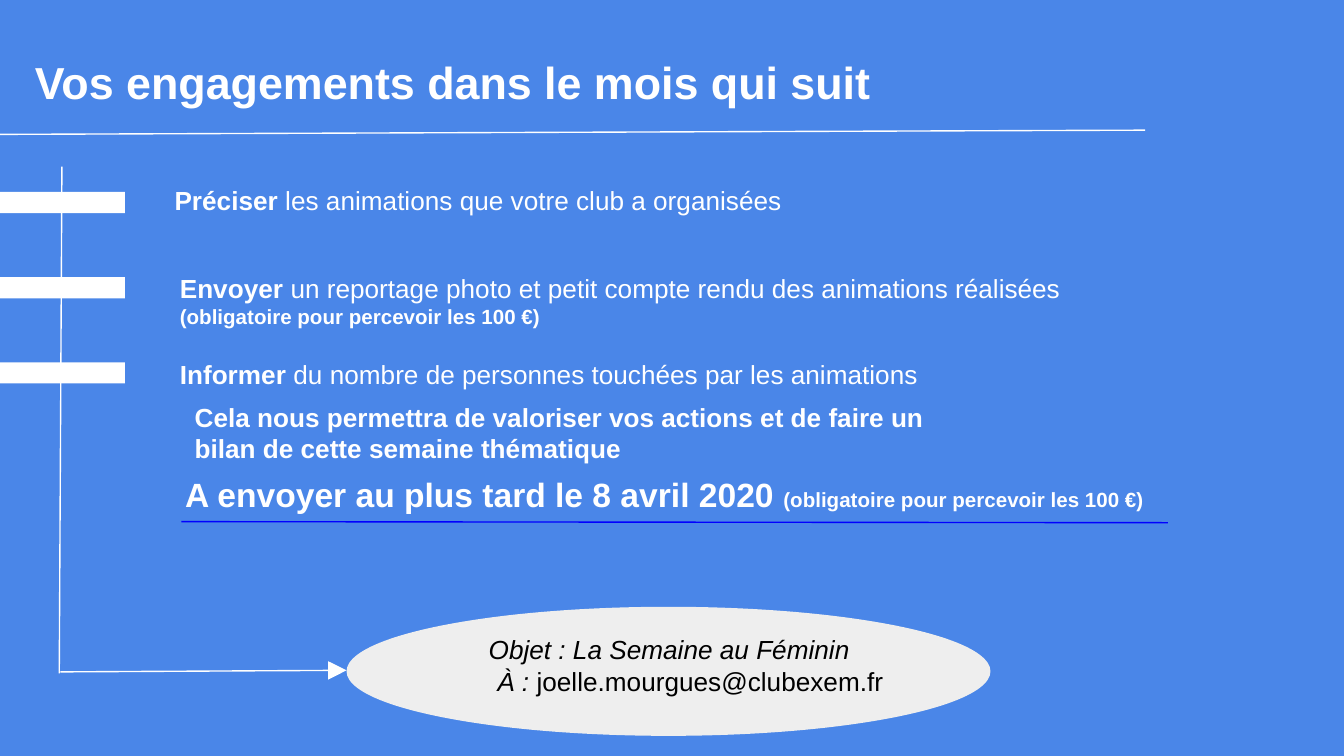
from pptx import Presentation
from pptx import util as u
from pptx.dml.color import RGBColor
from pptx.enum import shapes, text
from pptx.oxml.ns import qn
from lxml import etree

WHITE = "FFFFFF"


def color(hexa):
    return RGBColor.from_string(hexa)


def write(box, place, paras, tint=WHITE, align=text.PP_ALIGN.LEFT):
    box.left, box.top, box.width, box.height = [u.Cm(v) for v in place]
    frame = box.text_frame
    frame.word_wrap = True
    frame.auto_size = text.MSO_AUTO_SIZE.NONE
    frame.vertical_anchor = text.MSO_ANCHOR.TOP
    frame.margin_left = frame.margin_right = u.Cm(0.25)
    frame.margin_top = frame.margin_bottom = u.Cm(0.25)
    for i, parts in enumerate(paras):
        para = frame.add_paragraph() if i else frame.paragraphs[0]
        para.alignment = align
        for words, size, style in parts:
            run = para.add_run()
            run.text = words
            run.font.name = "Arial"
            run.font.size = u.Pt(size)
            run.font.bold = style == "b"
            run.font.italic = style == "i"
            run.font.color.rgb = color(tint)
    return frame


deck = Presentation()
deck.slide_width, deck.slide_height = u.Cm(25.4), u.Cm(14.29)
slide = deck.slides.add_slide(deck.slide_layouts[5])
slide.background.fill.solid()
slide.background.fill.fore_color.rgb = color("4A86E8")
items = slide.shapes

write(items.title, (0.41, 0.79, 23.93, 1.55),
      [[("Vos engagements dans le mois qui suit", 24, "b")]])

bars = [(0, 3.63 + 1.61 * i, 2.36, 0.4) for i in range(3)]
kinds = shapes.MSO_SHAPE
blocks = [(kinds.RECTANGLE, bar, WHITE) for bar in bars]
blocks.append((kinds.OVAL, (6.55, 11.47, 12.17, 2.44), "EEEEEE"))
for kind, place, tint in blocks:
    block = items.add_shape(kind, *[u.Cm(v) for v in place])
    block.shadow.inherit = False
    block.fill.solid()
    block.fill.fore_color.rgb = color(tint)
    block.line.fill.background()

lines = [
    ((0, 2.54, 21.64, 2.46), WHITE, False),
    ((3.43, 9.86, 22.07, 9.88), "0000FF", False),
    ((1.17, 3.15, 1.12, 12.73), WHITE, False),
    ((1.14, 12.7, 6.55, 12.67), WHITE, True),
]
for ends, tint, arrow in lines:
    line = items.add_connector(shapes.MSO_CONNECTOR.STRAIGHT, *[u.Cm(v) for v in ends])
    line.line.color.rgb = color(tint)
    line.line.width = u.Pt(0.75)
    if arrow:
        etree.SubElement(line.line._get_or_add_ln(), qn("a:tailEnd"),
                         type="triangle", w="lg", len="lg")
    etree.SubElement(line._element.spPr, qn("a:effectLst"))

must = ("(obligatoire pour percevoir les 100 €)", 11, "b")
notes = [
    ((3.05, 3.23, 14.96, 1.22),
     [("Préciser", 14, "b"), (" les animations que votre club a organisées", 14, "")]),
    ((3.15, 4.9, 18.92, 1.07),
     [("Envoyer ", 14, "b"),
      ("un reportage photo et petit compte rendu des animations réalisées ", 14, ""), must]),
    ((3.15, 6.53, 14.96, 1.22),
     [("Informer", 14, "b"),
      (" du nombre de personnes touchées par les animations", 14, "")]),
    ((3.43, 7.34, 14.96, 1.55),
     [("Cela nous permettra de valoriser vos actions et de faire un bilan "
       "de cette semaine thématique", 14, "b")]),
    ((3.25, 8.71, 22.86, 1.22),
     [("A envoyer au plus tard le 8 avril 2020 ", 18, "b"), must]),
]
for place, parts in notes:
    write(items.add_textbox(0, 0, 0, 0), place, [parts])

mail = write(items.add_textbox(0, 0, 0, 0), (5.31, 11.73, 14.68, 1.55),
             [[("Objet : La Semaine au Féminin", 14, "i")],
              [("À : ", 14, "i"), ("joelle.mourgues@clubexem.fr", 14, "")]],
             "000000", text.PP_ALIGN.CENTER)
mail.paragraphs[1]._p.get_or_add_pPr().set("marL", str(u.Cm(0.8)))

deck.save("out.pptx")
